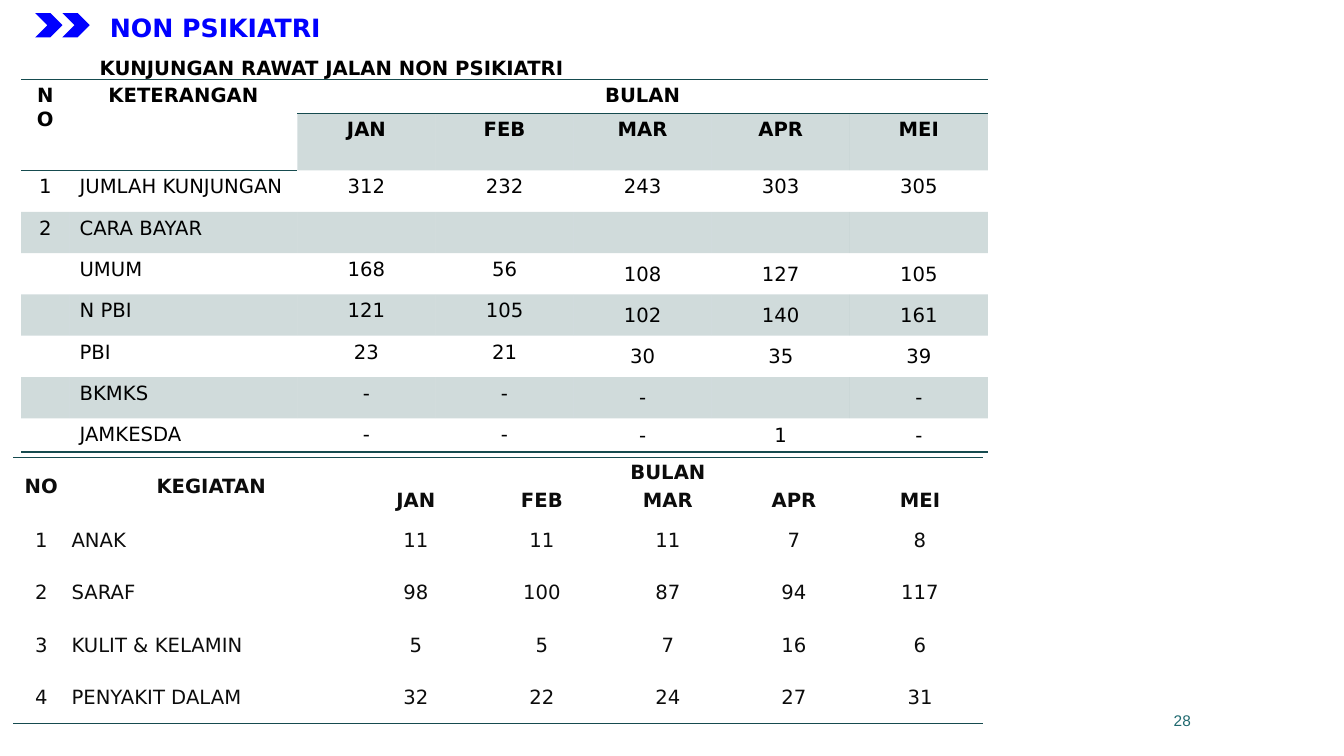
from lxml.etree import SubElement
from pptx import Presentation
from pptx.dml.color import RGBColor
from pptx.enum.shapes import MSO_SHAPE
from pptx.enum.text import MSO_ANCHOR, PP_ALIGN
from pptx.oxml import parse_xml
from pptx.oxml.ns import nsdecls, qn
from pptx.util import Inches, Pt

COLORS = {"blue": "0000FF", "black": "000000", "ink": "0C0C0C", "teal": "164B4F", "number": "1F696F"}
PLAIN_STYLE = "{2D5ABB26-0587-4C30-8999-92F81FD0307C}"
MONTHS = ["JAN", "FEB", "MAR", "APR", "MEI"]

VISITS = [
    ["NO", "KETERANGAN", "BULAN", "", "", "", ""],
    ["", ""] + MONTHS,
    ["1", "JUMLAH KUNJUNGAN", "312", "232", "243", "303", "305"],
    ["2", "CARA BAYAR", "", "", "", "", ""],
    ["", "UMUM", "168", "56", "108", "127", "105"],
    ["", "N PBI", "121", "105", "102", "140", "161"],
    ["", "PBI", "23", "21", "30", "35", "39"],
    ["", "BKMKS", "-", "-", "-", "", "-"],
    ["", "JAMKESDA", "-", "-", "-", "1", "-"],
]
ACTIVITIES = [
    ["NO", "KEGIATAN", "BULAN", "", "", "", ""],
    ["", ""] + MONTHS,
    ["1", "ANAK", "11", "11", "11", "7", "8"],
    ["2", "SARAF", "98", "100", "87", "94", "117"],
    ["3", "KULIT & KELAMIN", "5", "5", "7", "16", "6"],
    ["4", "PENYAKIT DALAM", "32", "22", "24", "27", "31"],
]


class ReportSlide:
    font_name = "DejaVu Sans"

    def __init__(self, presentation):
        self.slide = presentation.slides.add_slide(presentation.slide_layouts[6])

    def color(self, name):
        return RGBColor.from_string(COLORS[name])

    def style(self, paragraph, size, color, bold=False, align=PP_ALIGN.LEFT, font_name=None):
        paragraph.alignment = align
        font = paragraph.font
        font.name = font_name or self.font_name
        font.size = Pt(size)
        font.bold = bold
        font.color.rgb = self.color(color)

    def text(self, text, left, top, width, height, size, color, wrap=False,
             anchor=MSO_ANCHOR.TOP, spacing=1.0, **style):
        box = self.slide.shapes.add_textbox(Inches(left), Inches(top), Inches(width), Inches(height))
        frame = box.text_frame
        frame.word_wrap = wrap
        frame.vertical_anchor = anchor
        paragraph = frame.paragraphs[0]
        paragraph.text = text
        paragraph.line_spacing = spacing
        self.style(paragraph, size, color, **style)

    def chevron(self, left, top, width, height):
        shape = self.slide.shapes.add_shape(
            MSO_SHAPE.CHEVRON, Inches(left), Inches(top), Inches(width), Inches(height))
        shape.shadow.inherit = False
        shape.fill.solid()
        shape.fill.fore_color.rgb = self.color("blue")
        shape.line.fill.background()

    def fill(self, cell, tinted):
        if not tinted:
            cell.fill.background()
            return
        cell.fill.solid()
        cell.fill.fore_color.rgb = self.color("teal")
        color = cell._tc.tcPr.find(".//" + qn("a:srgbClr"))
        SubElement(color, qn("a:alpha"), val="20000")

    def border(self, cell, edges):
        properties = cell._tc.get_or_add_tcPr()
        for index, edge in enumerate(edges):
            properties.insert(index, parse_xml(
                f'<a:ln{edge} {nsdecls("a")} w="12700"><a:solidFill>'
                f'<a:srgbClr val="{COLORS["teal"]}"/></a:solidFill></a:ln{edge}>'))

    def table(self, rows, left, top, widths, heights, color, inset, compact,
              tinted=lambda row, column: False, header_rule=False):
        frame = self.slide.shapes.add_table(
            len(rows), len(widths), Inches(left), Inches(top), Inches(sum(widths)), Inches(sum(heights)))
        table = frame.table
        frame._element.find(".//" + qn("a:tableStyleId")).text = PLAIN_STYLE
        table.first_row = table.horz_banding = False
        for column, width in zip(table.columns, widths):
            column.width = Inches(width)
        for row, height in zip(table.rows, heights):
            row.height = Inches(height)
        for column in (0, 1):
            table.cell(0, column).merge(table.cell(1, column))
        table.cell(0, 2).merge(table.cell(0, len(widths) - 1))
        for row, values in enumerate(rows):
            for column, value in enumerate(values):
                cell = table.cell(row, column)
                header = row < 2
                align = PP_ALIGN.LEFT if column == 1 and not header else PP_ALIGN.CENTER
                paragraph = cell.text_frame.paragraphs[0]
                if value:
                    paragraph.text = value
                self.style(paragraph, 14, color, bold=header, align=align)
                if compact(row, column):
                    cell.vertical_anchor = MSO_ANCHOR.MIDDLE
                    cell.margin_left = cell.margin_right = Inches(inset)
                    cell.margin_top, cell.margin_bottom = Inches(0.01), 0
                self.fill(cell, tinted(row, column))
                ruled = header_rule and (row == 0 or row == 1 and column < 2)
                self.border(cell, ["T"] * (row == 0) + ["B"] * (ruled or row == len(rows) - 1))


def main():
    presentation = Presentation()
    presentation.slide_width, presentation.slide_height = Inches(13.33), Inches(7.5)
    report = ReportSlide(presentation)
    report.text("28", 8.8, 6.95, 3.11, 0.4, 11, "number", wrap=True,
                anchor=MSO_ANCHOR.MIDDLE, align=PP_ALIGN.RIGHT, font_name="Arial")
    report.table(ACTIVITIES, 0.13, 4.54, [0.56, 2.81] + [1.25] * 5, [0.28] * 2 + [0.52] * 4,
                 "ink", 0.02, compact=lambda row, column: True)
    report.text("KUNJUNGAN RAWAT JALAN NON PSIKIATRI", 0.89, 0.53, 5.07, 0.31, 14, "black",
                bold=True, spacing=0.9)
    for left in (0.35, 0.62):
        report.chevron(left, 0.13, 0.27, 0.24)
    report.text("NON PSIKIATRI", 0.9, 0.07, 2.47, 0.4, 18, "blue", bold=True, align=PP_ALIGN.CENTER)
    report.table(VISITS, 0.21, 0.79, [0.48, 2.26] + [1.37] * 5, [0.31, 0.22] + [0.41] * 6 + [0.25],
                 "black", 0.01, compact=lambda row, column: row > 3 and column > 3,
                 tinted=lambda row, column: row % 2 == 1 and (row > 1 or column > 1),
                 header_rule=True)
    presentation.save("out.pptx")


if __name__ == "__main__":
    main()
